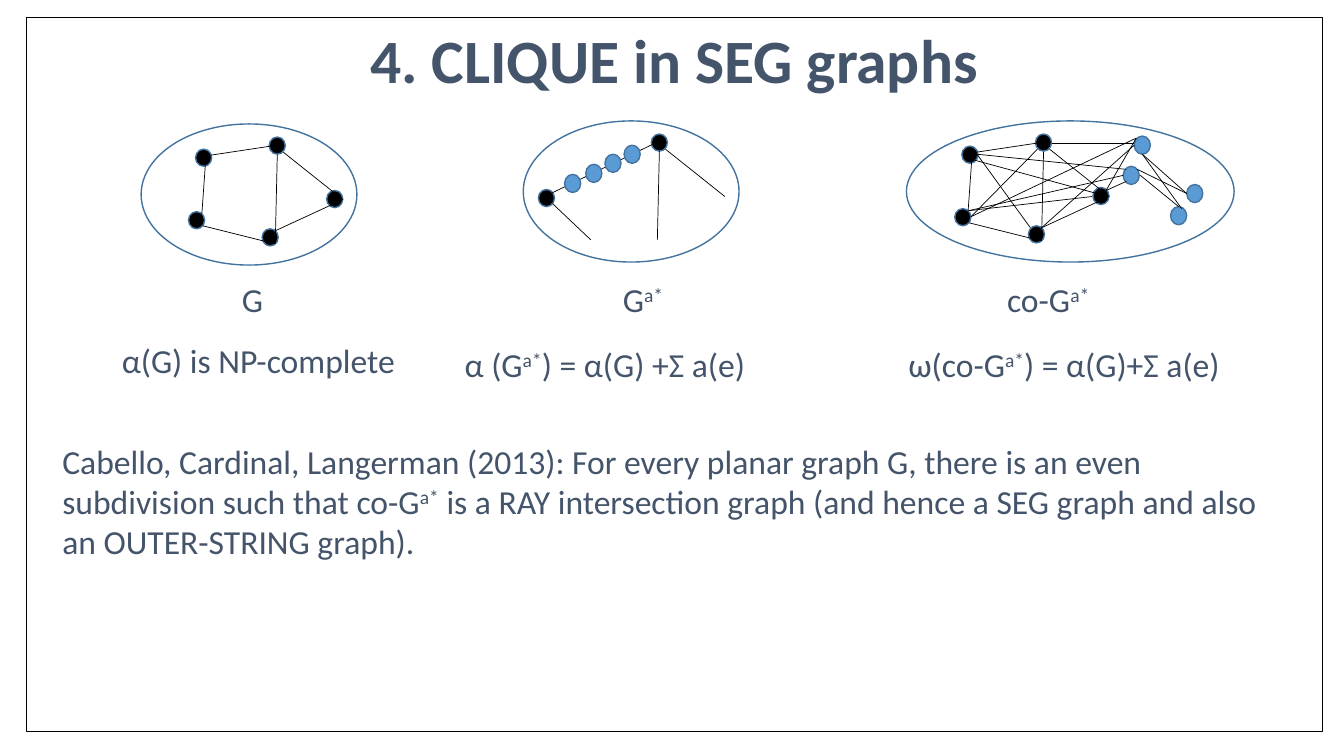
from pptx import Presentation
from pptx.dml.color import RGBColor
from pptx.enum.shapes import MSO_CONNECTOR, MSO_SHAPE
from pptx.enum.text import MSO_ANCHOR, MSO_AUTO_SIZE, PP_ALIGN
from pptx.oxml.ns import qn
from pptx.util import Inches, Pt
from lxml import etree

OVAL, RECT = MSO_SHAPE.OVAL, MSO_SHAPE.RECTANGLE
LINE = MSO_CONNECTOR.STRAIGHT
TOP, CENTER, LEFT = MSO_ANCHOR.TOP, PP_ALIGN.CENTER, PP_ALIGN.LEFT
GROW = MSO_AUTO_SIZE.SHAPE_TO_FIT_TEXT
BLACK, WHITE, BLUE, RIM, INK = "000000", "FFFFFF", "5B9BD5", "43739E", "44546A"


def color(code):
    return RGBColor.from_string(code)


class Board:
    font = "Calibri"

    def __init__(self, slide):
        self.shapes = slide.shapes

    def shape(self, kind, box, fill, line, width):
        item = self.shapes.add_shape(kind, *map(Inches, box))
        item.shadow.inherit = False
        if fill:
            item.fill.solid()
            item.fill.fore_color.rgb = color(fill)
        else:
            item.fill.background()
        item.line.color.rgb = color(line)
        item.line.width = Pt(width)
        return item

    def dots(self, spots, fill, high):
        for x, y in spots:
            self.shape(OVAL, (x, y, 0.16, high), fill, RIM, 1)

    def edges(self, ends):
        for end in ends:
            item = self.shapes.add_connector(LINE, *map(Inches, end))
            item.line.color.rgb = color(BLACK)
            item.line.width = Pt(0.5)
            etree.SubElement(item._element.spPr, qn("a:effectLst"))

    def words(self, frame, parts, size, bold=False, align=LEFT):
        """Add the runs; every second one is a superscript."""
        para = frame.paragraphs[0]
        para.alignment = align
        for i, part in enumerate(parts):
            run = para.add_run()
            run.text = part
            run.font.name = self.font
            run.font.size = Pt(size)
            run.font.bold = bold
            run.font.color.rgb = color(INK)
            if i % 2:
                run._r.get_or_add_rPr().set("baseline", "30000")

    def text(self, box, *parts, wrap=False):
        frame = self.shapes.add_textbox(*map(Inches, box)).text_frame
        frame.word_wrap = wrap
        frame.auto_size = GROW
        self.words(frame, parts, 24)

    def graph(self, oval, nodes, ends, extra=(), more=()):
        self.shape(OVAL, oval, None, RIM, 1)
        self.dots(nodes, BLACK, 0.17)
        self.edges(ends)
        self.dots(extra, BLUE, 0.18)
        self.edges(more)


# Graph G, drawn again inside its complement
NODES = [(1.94, 1.48), (2.67, 1.36), (1.87, 2.1), (2.6, 2.27), (3.24, 1.89)]
ENDS = [(2.02, 1.55, 2.75, 1.44), (2.81, 1.51, 3.4, 1.98),
        (2.73, 2.29, 3.4, 1.98), (2.73, 2.42, 2.75, 1.54),
        (2, 2.15, 2.04, 1.59), (2.01, 2.24, 2.73, 2.42)]
DX, DY = 7.6, -0.03

# Subdivided graph
SUB_NODES = [(5.34, 1.88), (6.46, 1.33)]
SUB_ENDS = [(5.4, 1.95, 6.54, 1.4), (6.6, 1.48, 7.19, 1.95),
            (6.52, 2.38, 6.54, 1.5), (5.86, 2.38, 5.48, 2.02)]
SUB_DOTS = [(5.81, 1.63), (5.6, 1.73), (6, 1.53), (6.19, 1.44)]

# Complement
CO_DOTS = [(11.14, 1.65), (11.25, 1.35), (11.61, 2.05), (11.77, 1.83)]
CO_ENDS = [(9.69, 1.53, 10.22, 2.26), (10.29, 1.48, 9.63, 2.15),
           (10.83, 1.95, 9.61, 2.09), (10.99, 1.95, 9.67, 1.59),
           (10.43, 1.42, 11.25, 1.42), (9.63, 2.15, 11.27, 1.37),
           (10.33, 2.26, 11.25, 1.44), (10.97, 1.89, 11.27, 1.37),
           (9.69, 1.53, 11.17, 1.68), (9.61, 2.09, 11.14, 1.74),
           (10.97, 1.89, 11.17, 1.8), (11.33, 1.53, 11.77, 1.92),
           (11.28, 1.68, 11.77, 1.92), (11.33, 1.53, 11.72, 2.07),
           (11.31, 1.74, 11.69, 2.05)]


def main():
    deck = Presentation()
    deck.slide_width, deck.slide_height = Inches(13.33), Inches(7.5)
    board = Board(deck.slides.add_slide(deck.slide_layouts[6]))

    # Frame with title
    frame = board.shape(RECT, (0.26, 0.17, 12.86, 7.09), WHITE, BLACK, 0.75).text_frame
    frame.word_wrap = False
    frame.vertical_anchor = TOP
    board.words(frame, ["4. CLIQUE in SEG graphs"], 44, True, CENTER)

    # Graphs
    board.graph((1.4, 1.23, 2.14, 1.4), NODES, ENDS)
    board.graph((5.19, 1.2, 2.14, 1.4), SUB_NODES, SUB_ENDS, SUB_DOTS)
    nodes = [(x + DX, y + DY) for x, y in NODES]
    ends = [(a + DX, b + DY, c + DX, d + DY) for a, b, c, d in ENDS]
    board.graph((8.99, 1.2, 3.25, 1.4), nodes, ends, CO_DOTS, CO_ENDS)

    # Names
    board.text((2.3, 2.72, 0.41, 0.5), "G")
    board.text((6.08, 2.72, 0.63, 0.5), "G", "a*")
    board.text((9.89, 2.72, 1.05, 0.5), "co-G", "a*")

    # Formulas
    board.text((1.11, 3.32, 2.97, 0.5), "α(G) is NP-complete")
    board.text((4.51, 3.36, 3.12, 0.5), "α (G", "a*", ") = α(G) +Σ a(e)")
    board.text((8.91, 3.36, 3.51, 0.5), "ω(co-G", "a*", ") = α(G)+Σ a(e)", wrap=True)

    # Theorem
    board.text((0.52, 4.32, 12.06, 1.31),
               "Cabello, Cardinal, Langerman (2013): For every planar graph G, "
               "there is an even subdivision such that co-G", "a*",
               " is a RAY intersection graph (and hence a SEG graph and also "
               "an OUTER-STRING graph).", wrap=True)

    deck.save("out.pptx")


if __name__ == "__main__":
    main()
